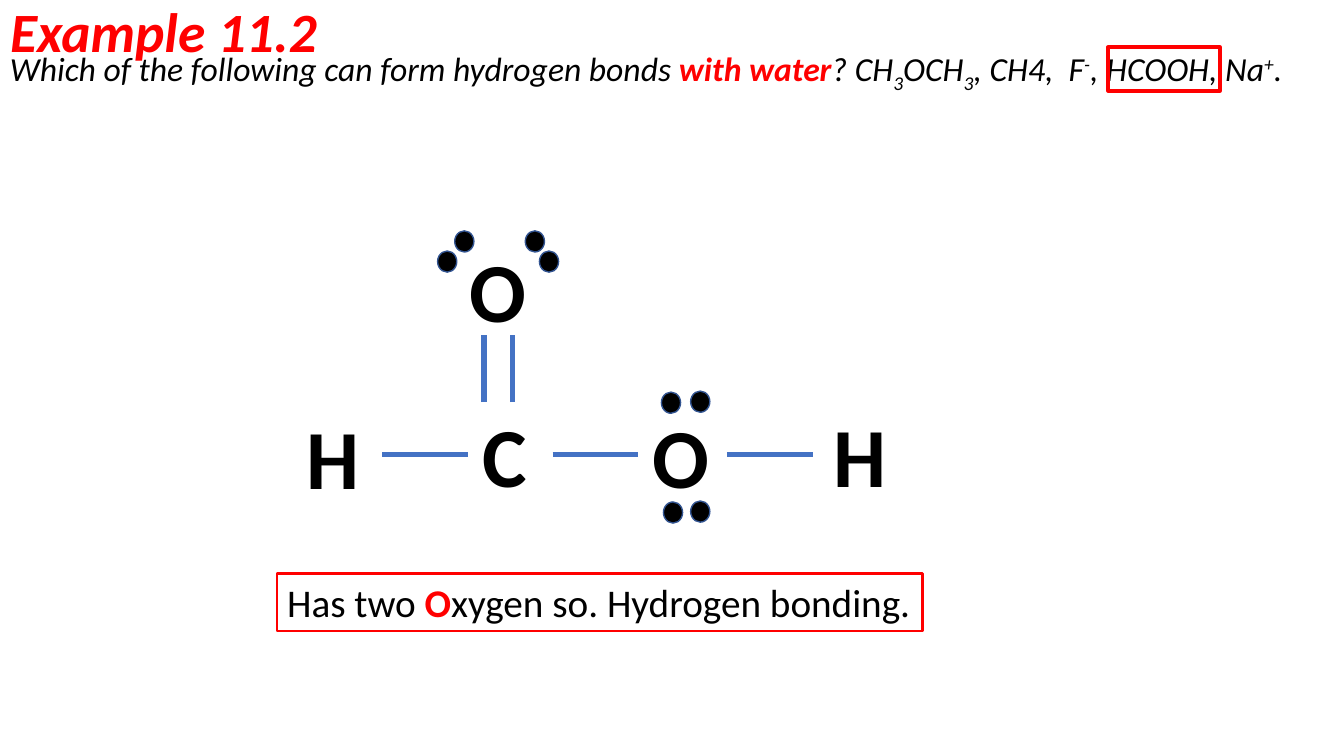
from lxml.etree import SubElement
from pptx import Presentation
from pptx.dml.color import RGBColor
from pptx.enum.shapes import MSO_CONNECTOR, MSO_SHAPE
from pptx.enum.text import MSO_ANCHOR, MSO_AUTO_SIZE, PP_ALIGN
from pptx.oxml.ns import qn
from pptx.util import Inches, Pt

# Content: runs are (text, emphasised, baseline shift in percent)
TITLE = "Example 11.2"
QUESTION = [
    ("Which of the following can form hydrogen bonds ", False, 0),
    ("with water", True, 0),
    ("? CH", False, 0), ("3", False, -25),
    ("OCH", False, 0), ("3", False, -25),
    (", CH4,  F", False, 0), ("-", False, 30),
    (", HCOOH, Na", False, 0), ("+", False, 30),
    (".", False, 0),
]
CAPTION = [("Has two ", False, 0), ("O", True, 0),
           ("xygen so. Hydrogen bonding.", False, 0)]

# Molecule: atoms as (symbol, left, top, width)
ROW = 3.95
ATOMS = [("O", 4.56, 2.32, 0.97), ("H", 2.94, ROW + 0.02, 0.74),
         ("C", 4.69, ROW, 0.97), ("O", 6.37, ROW + 0.01, 0.97),
         ("H", 8.17, ROW, 0.74)]
LONE_PAIRS = [
    ((4.34, 2.49), (4.51, 2.29)), ((5.35, 2.49), (5.21, 2.29)),
    ((6.56, 3.89), (6.85, 3.88)), ((6.58, 4.98), (6.85, 4.97)),
]
SINGLE_BOND_STARTS = [3.79, 5.48, 7.21]
DOUBLE_BOND_COLUMNS = [4.8, 5.08]
BOND_ROW, BOND_LENGTH = 4.51, 0.85
DOUBLE_BOND_ROWS = (3.99, 3.32)

RED, BLACK, BLUE, DOT_EDGE = "FF0000", "000000", "4472C4", "325491"


def color(hex_string):
    return RGBColor.from_string(hex_string)


def style(run, size, hex_string, bold=False, italic=False):
    font = run.font
    font.name, font.size = "Calibri", Pt(size)
    font.bold, font.italic = bold, italic
    font.color.rgb = color(hex_string)


def write(frame, runs, size, italic=False):
    frame.word_wrap = True
    paragraph = frame.paragraphs[0]
    paragraph.alignment = PP_ALIGN.LEFT
    for text, emphasised, shift in runs:
        run = paragraph.add_run()
        run.text = text
        style(run, size, RED if emphasised else BLACK, emphasised, italic)
        if shift:
            run._r.get_or_add_rPr().set("baseline", str(shift * 1000))


def add_text(slide, box, runs, size, italic=False):
    label = slide.shapes.add_textbox(*map(Inches, box))
    write(label.text_frame, runs, size, italic)
    return label


def add_outlined(slide, preset, box, line, width, fill=None):
    shape = slide.shapes.add_shape(preset, *map(Inches, box))
    shape.shadow.inherit = False
    if fill:
        shape.fill.solid()
        shape.fill.fore_color.rgb = color(fill)
    else:
        shape.fill.background()
    shape.line.color.rgb = color(line)
    shape.line.width = Pt(width)
    return shape


def add_bond(slide, *ends):
    bond = slide.shapes.add_connector(MSO_CONNECTOR.STRAIGHT, *map(Inches, ends))
    bond.line.color.rgb = color(BLUE)
    bond.line.width = Pt(3.75)
    SubElement(bond._element.spPr, qn("a:effectLst"))


def main():
    deck = Presentation()
    deck.slide_width, deck.slide_height = Inches(13.33), Inches(7.5)
    slide = deck.slides.add_slide(deck.slide_layouts[5])

    # Heading and question
    title = slide.shapes.title
    title.left, title.top, title.width, title.height = map(Inches, (0, -0.01, 11.5, 0.71))
    heading = title.text_frame
    heading.text = TITLE
    heading.auto_size = MSO_AUTO_SIZE.NONE
    heading.vertical_anchor = MSO_ANCHOR.MIDDLE
    heading.paragraphs[0].alignment = PP_ALIGN.LEFT
    heading.paragraphs[0].line_spacing = 0.9
    style(heading.paragraphs[0].runs[0], 39.6, RED, True, True)
    add_text(slide, (0, 0.43, 13.33, 0.5), QUESTION, 24, italic=True)
    add_outlined(slide, MSO_SHAPE.RECTANGLE, (10.99, 0.47, 1.11, 0.43), RED, 2.75)

    # Atoms
    for symbol, left, top, width in ATOMS:
        atom = add_text(slide, (left, top, width, 1.11), [(symbol, False, 0)], 60)
        atom.text_frame.paragraphs[0].runs[0].font.bold = True

    # Lone pairs
    for pair in LONE_PAIRS:
        for left, top in pair:
            add_outlined(slide, MSO_SHAPE.OVAL, (left, top, 0.19, 0.21), DOT_EDGE, 1, BLACK)

    # Bonds
    for start in SINGLE_BOND_STARTS:
        add_bond(slide, start, BOND_ROW, start + BOND_LENGTH, BOND_ROW)
    for column in DOUBLE_BOND_COLUMNS:
        add_bond(slide, column, DOUBLE_BOND_ROWS[0], column, DOUBLE_BOND_ROWS[1])

    # Caption
    caption = add_outlined(slide, MSO_SHAPE.RECTANGLE, (2.75, 5.69, 6.4, 0.57), RED, 1.75)
    caption.text_frame.vertical_anchor = MSO_ANCHOR.TOP
    write(caption.text_frame, CAPTION, 28)

    deck.save("out.pptx")


if __name__ == "__main__":
    main()
